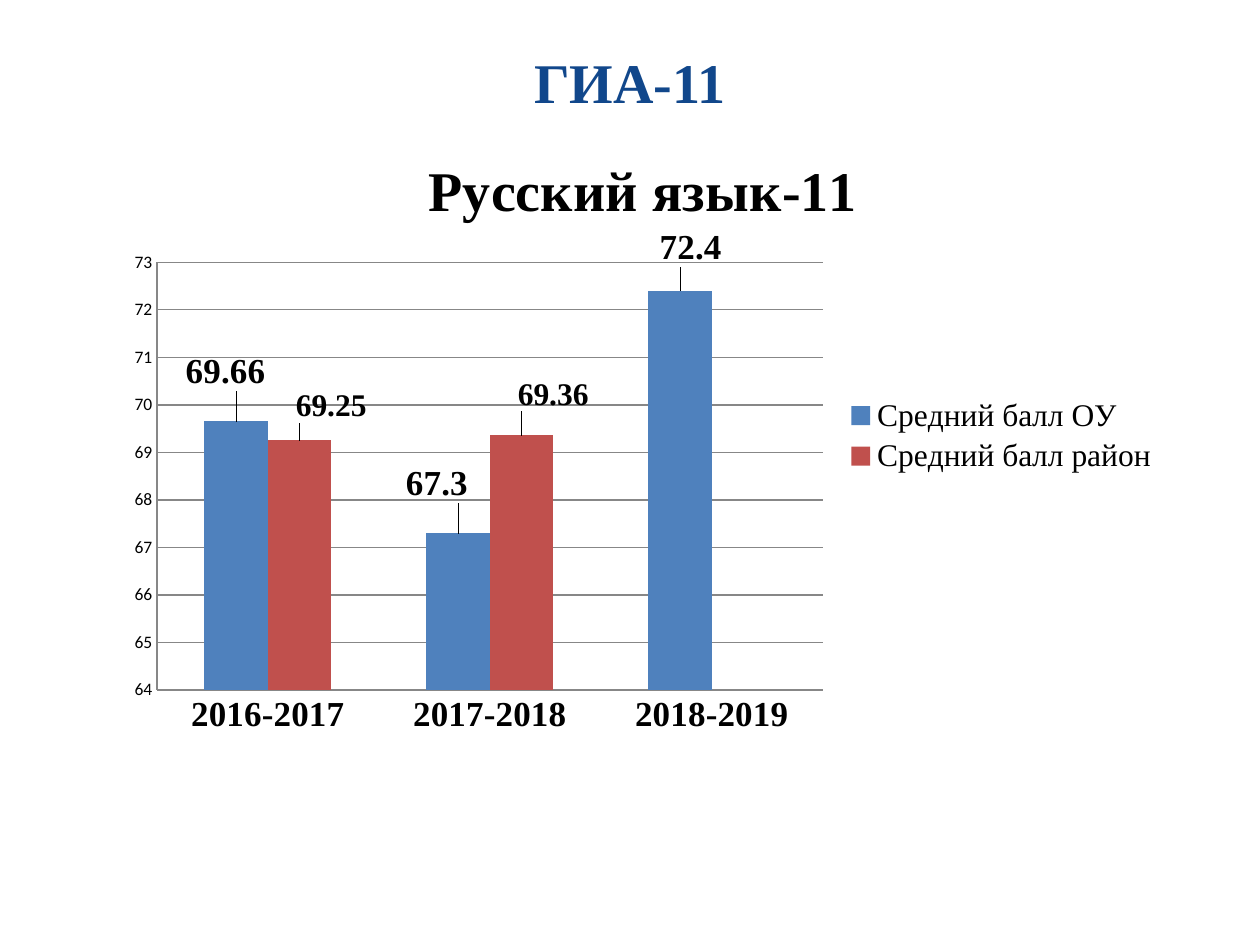
from dataclasses import dataclass
from typing import Optional

from lxml import etree
from pptx import Presentation
from pptx.chart.data import CategoryChartData
from pptx.dml.color import RGBColor
from pptx.enum.chart import XL_CHART_TYPE, XL_LABEL_POSITION, XL_LEGEND_POSITION, XL_TICK_MARK
from pptx.enum.text import MSO_ANCHOR, PP_ALIGN
from pptx.oxml.ns import qn
from pptx.util import Inches, Pt

COLUMNS = XL_CHART_TYPE.COLUMN_CLUSTERED
OUTSIDE_END = XL_LABEL_POSITION.OUTSIDE_END
LEGEND_RIGHT = XL_LEGEND_POSITION.RIGHT
NO_TICK = XL_TICK_MARK.NONE
CENTER = PP_ALIGN.CENTER
MIDDLE = MSO_ANCHOR.MIDDLE

NAVY = RGBColor(0x11, 0x47, 0x8B)
BLUE = RGBColor(0x4F, 0x81, 0xBD)
RED = RGBColor(0xC0, 0x50, 0x4D)
BLACK = RGBColor(0, 0, 0)
GREY = RGBColor(0x87, 0x87, 0x87)
SERIF = "Times New Roman"
SANS = "Calibri"

YEARS = ("2016-2017", "2017-2018", "2018-2019")


@dataclass(frozen=True)
class ScoreSeries:
    name: str
    scores: tuple[Optional[float], ...]
    color: RGBColor
    label_size: int
    label_shifts: tuple[tuple[float, float], ...]  # fractions of the chart size


SCORES = (
    ScoreSeries("Средний балл ОУ", (69.66, 67.3, 72.4), BLUE, 20,
                ((-0.01, -0.04), (-0.02, -0.04), (0.01, -0.03))),
    ScoreSeries("Средний балл район", (69.25, 69.36, None), RED, 18,
                ((0.03, -0.02), (0.03, -0.03))),
)


def set_font(font, size: float, name: str = SERIF, bold: bool = False,
             color: RGBColor = BLACK) -> None:
    font.size = Pt(size)
    font.name = name
    font.bold = bold
    font.color.rgb = color


def write_text(frame, text: str, **font_format) -> None:
    paragraph = frame.paragraphs[0]
    paragraph.alignment = CENTER
    run = paragraph.add_run()
    run.text = text
    set_font(run.font, **font_format)


def set_layout(parent, index: int, **values) -> None:
    """Give a chart part a manual layout at the given child index."""
    for old in parent.findall(qn("c:layout")):
        parent.remove(old)
    layout = etree.Element(qn("c:layout"))
    parent.insert(index, layout)
    manual = etree.SubElement(layout, qn("c:manualLayout"))
    for tag, value in values.items():
        etree.SubElement(manual, qn(f"c:{tag}")).set("val", str(value))


def style_axis(axis, **font_format) -> None:
    axis.major_tick_mark = NO_TICK
    axis.minor_tick_mark = NO_TICK
    axis.format.line.color.rgb = GREY
    set_font(axis.tick_labels.font, **font_format)


def style_series(series, content: ScoreSeries) -> None:
    series.format.fill.solid()
    series.format.fill.fore_color.rgb = content.color
    labels = series.data_labels
    labels.show_value = True
    labels.position = OUTSIDE_END
    set_font(labels.font, content.label_size, bold=True)
    for index, (x, y) in enumerate(content.label_shifts):
        label = series.points[index].data_label
        set_font(label.font, content.label_size, bold=True)
        label.position = OUTSIDE_END
        set_layout(labels._element.findall(qn("c:dLbl"))[index], 1, x=x, y=y)


def add_score_chart(slide) -> None:
    data = CategoryChartData()
    data.categories = YEARS
    for content in SCORES:
        data.add_series(content.name, content.scores)
    chart = slide.shapes.add_chart(COLUMNS, Inches(0.91), Inches(1), Inches(8.39),
                                   Inches(4.92), data).chart
    set_font(chart.font, 10, SANS)

    # Title and legend
    chart.has_title = True
    write_text(chart.chart_title.text_frame, "Русский язык-11", size=32, bold=True)
    chart.chart_title.include_in_layout = False
    chart.has_legend = True
    chart.legend.position = LEGEND_RIGHT
    chart.legend.include_in_layout = False
    set_font(chart.legend.font, 18)

    # Axes
    style_axis(chart.category_axis, size=20, bold=True)
    scale = chart.value_axis
    style_axis(scale, size=10, name=SANS)
    scale.minimum_scale, scale.maximum_scale, scale.major_unit = 64, 73, 1
    scale.has_major_gridlines = True
    scale.major_gridlines.format.line.color.rgb = GREY

    # Columns
    plot = chart.plots[0]
    plot.gap_width = 150
    plot.overlap = 0
    plot.vary_by_categories = False
    for series, content in zip(plot.series, SCORES):
        style_series(series, content)
    set_layout(chart._chartSpace.chart.plotArea, 0, layoutTarget="inner", xMode="edge",
               yMode="edge", x=0.04, y=0.22, w=0.63, h=0.69)


def add_heading(slide) -> None:
    heading = slide.shapes.add_textbox(Inches(1.22), Inches(0.29), Inches(7.56), Inches(0.71))
    frame = heading.text_frame
    frame.word_wrap = True
    frame.vertical_anchor = MIDDLE
    write_text(frame, "ГИА-11", size=32, bold=True, color=NAVY)


def main() -> None:
    deck = Presentation()
    deck.slide_width, deck.slide_height = Inches(10), Inches(7.5)
    slide = deck.slides.add_slide(deck.slide_layouts[6])
    add_score_chart(slide)
    add_heading(slide)
    deck.save("out.pptx")


if __name__ == "__main__":
    main()
